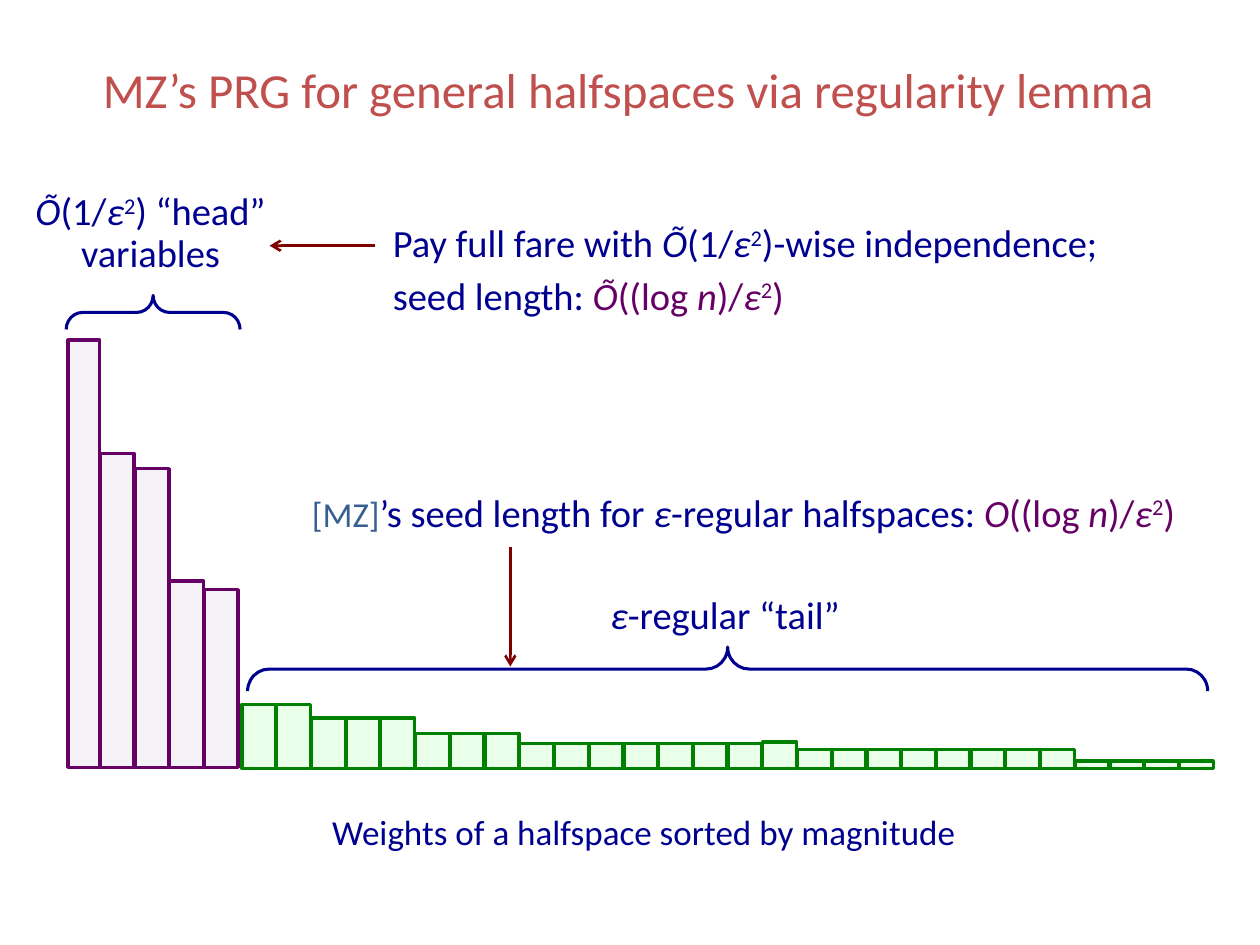
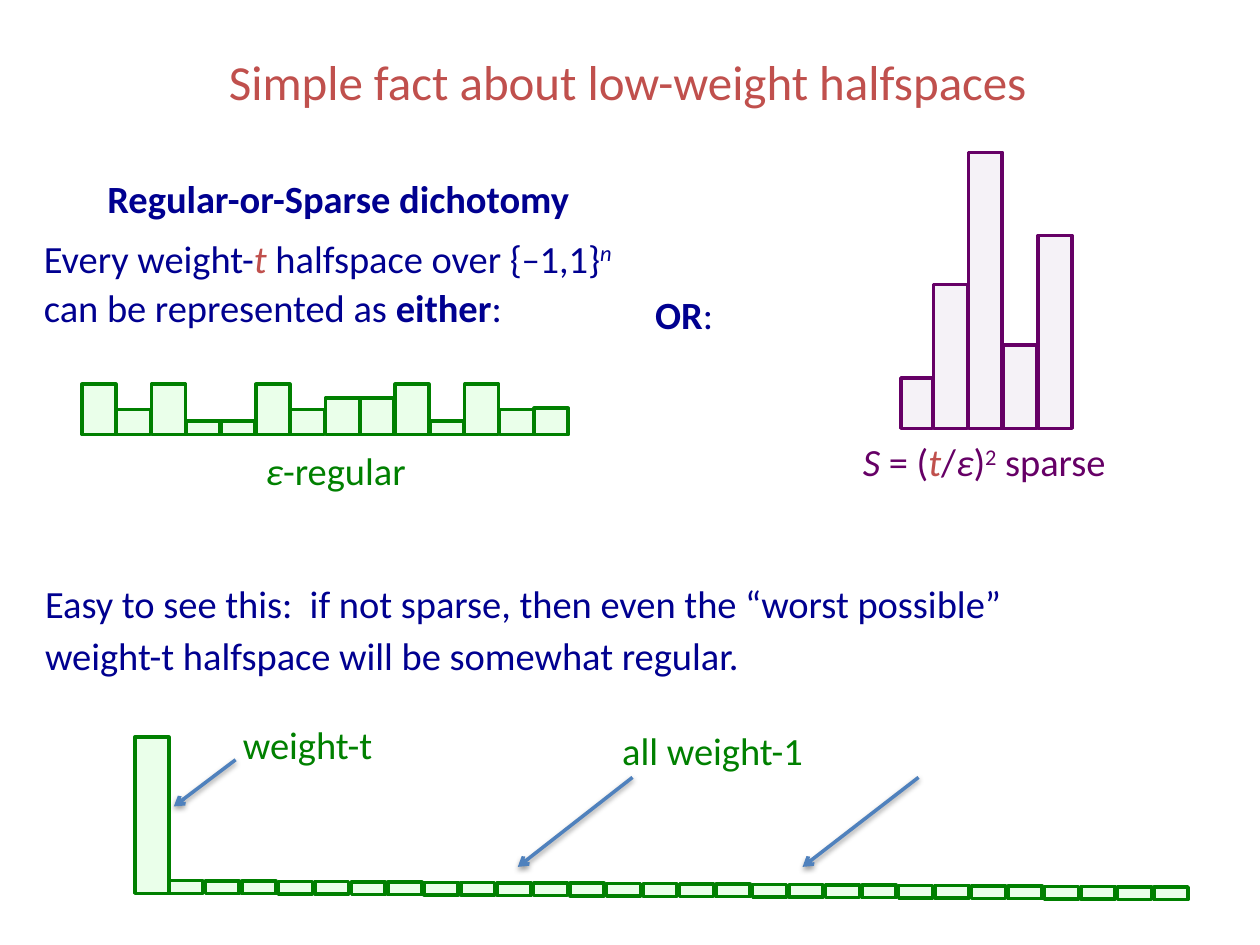
from lxml.etree import SubElement
from pptx import Presentation
from pptx.dml.color import RGBColor
from pptx.enum.shapes import MSO_CONNECTOR, MSO_SHAPE
from pptx.enum.text import MSO_ANCHOR, PP_ALIGN
from pptx.oxml.ns import qn
from pptx.util import Inches, Pt

NAVY, RED, GREEN, PURPLE = "000090", "C0504D", "008000", "660066"
MINT, LAVENDER = "CCFFCC", "E6E0EC"
MAROON, BLUE, STEEL = "800000", "4F81BD", "376092"
LEFT, CENTER = PP_ALIGN.LEFT, PP_ALIGN.CENTER
BAR_WIDTH = 0.27


def add_frame(page, left, top, width, height):
    box = page.shapes.add_textbox(Inches(left), Inches(top), Inches(width), Inches(height))
    frame = box.text_frame
    frame.word_wrap = True
    frame.margin_top = 0
    return frame


def add_para(frame, spans, align=LEFT, color=NAVY, size=22, spacing=30, after=0):
    para = frame.paragraphs[0] if not frame.text else frame.add_paragraph()
    para.alignment = align
    para.line_spacing = Pt(spacing)
    para.space_after = Pt(after)
    for text, style, *special in spans:
        if text == "\n":
            para.add_line_break()
            continue
        span = para.add_run()
        span.text = text
        font = span.font
        font.name = "Calibri"
        font.size = Pt(special[1] if len(special) > 1 else size)
        font.color.rgb = RGBColor.from_string(special[0] if special else color)
        font.bold = "b" in style
        font.italic = "i" in style
        if "^" in style:
            font.fill
            span.font._element.set("baseline", "30000")


deck = Presentation()
deck.slide_width, deck.slide_height = Inches(10), Inches(7.5)
lemma_page, fact_page = [deck.slides.add_slide(deck.slide_layouts[6]) for _ in range(2)]

titles = [
    (lemma_page, 0, -0.19, "MZ’s PRG for general halfspaces via regularity lemma"),
    (fact_page, 0.04, -0.26, "Simple fact about low-weight halfspaces "),
]
for page, left, top, title in titles:
    frame = add_frame(page, left, top, 9.97, 1.73)
    frame.margin_top = Inches(0.05)
    frame.vertical_anchor = MSO_ANCHOR.MIDDLE
    add_para(frame, [(title, "")], CENTER, RED, 28, 38.6)

tail_weights = [0.51] * 2 + [0.4] * 3 + [0.28] * 3 + [0.2] * 7 + [0.21] + [0.15] * 8 + [0.06] * 4
head_weights = [3.39, 2.49, 2.37, 1.48, 1.41]
regular_weights = [0.4, 0.2, 0.4, 0.11, 0.11, 0.4, 0.2, 0.29, 0.29, 0.4, 0.11, 0.4, 0.2, 0.21]
sparse_weights = [0.4, 1.14, 2.19, 0.66, 1.53]
bar_rows = [
    (lemma_page, 1.92, 9.36, 6.1, 0, MINT, GREEN, tail_weights),
    (lemma_page, 0.52, 1.62, 6.09, 0, LAVENDER, PURPLE, head_weights),
    (fact_page, 0.65, 4.24, 3.45, 0, MINT, GREEN, regular_weights),
    (fact_page, 7.13, 8.24, 3.4, 0, LAVENDER, PURPLE, sparse_weights),
    (fact_page, 1.07, 1.07, 7.09, 0, MINT, GREEN, [1.24]),
    (fact_page, 1.34, 9.16, 7.09, 0.05, MINT, GREEN, [0.1] * 28),
]
for page, first, last, bottom, drop, fill, outline, weights in bar_rows:
    gaps = max(len(weights) - 1, 1)
    for index, weight in enumerate(weights):
        trim = 0.02 if fill == LAVENDER and index == 0 else 0
        left = first + (last - first) * index / gaps + trim
        top = bottom + drop * index / gaps - weight
        bar = page.shapes.add_shape(
            MSO_SHAPE.RECTANGLE, Inches(left), Inches(top), Inches(BAR_WIDTH - trim), Inches(weight))
        bar.shadow.inherit = False
        bar.fill.solid()
        bar.fill.fore_color.rgb = RGBColor.from_string(fill)
        tint = bar.element.spPr.find(qn("a:solidFill")).find(qn("a:srgbClr"))
        SubElement(tint, qn("a:alpha"), val="40000")
        bar.line.color.rgb = RGBColor.from_string(outline)
        bar.line.width = Pt(2)

for left, top, width, height in [(5.6, 1.5, 0.35, 7.62), (1.08, 1.79, 0.27, 1.38)]:
    brace = lemma_page.shapes.add_shape(
        MSO_SHAPE.LEFT_BRACE, Inches(left), Inches(top), Inches(width), Inches(height))
    brace.rotation = 90
    brace.adjustments[0] = 0.485
    brace.adjustments[1] = 0.5
    brace.shadow.inherit = False
    brace.fill.background()
    brace.line.color.rgb = RGBColor.from_string(NAVY)
    brace.line.width = Pt(1.75)

arrows = [
    (lemma_page, 2.98, 1.95, 2.14, 1.95, MAROON, 1.5),
    (lemma_page, 4.05, 4.34, 4.05, 5.29, MAROON, 1.5),
    (fact_page, 1.87, 6.03, 1.38, 6.4, BLUE, 2),
    (fact_page, 5.02, 6.17, 4.11, 6.88, BLUE, 2),
    (fact_page, 7.29, 6.17, 6.37, 6.88, BLUE, 2),
]
for page, start_x, start_y, end_x, end_y, color, weight in arrows:
    arrow = page.shapes.add_connector(
        MSO_CONNECTOR.STRAIGHT, Inches(start_x), Inches(start_y), Inches(end_x), Inches(end_y))
    arrow.line.color.rgb = RGBColor.from_string(color)
    arrow.line.width = Pt(weight)
    properties = arrow.element.spPr
    SubElement(properties.find(qn("a:ln")), qn("a:tailEnd"), type="arrow")
    effects = SubElement(properties, qn("a:effectLst"))
    if color == BLUE:
        shadow = SubElement(effects, qn("a:outerShdw"), blurRad="40000", dist="20000",
                            dir="5400000", rotWithShape="0")
        shade = SubElement(shadow, qn("a:srgbClr"), val="000000")
        SubElement(shade, qn("a:alpha"), val="38000")

inverse_square = [("(1/", ""), ("ε", "i"), ("2", "^")]
log_bound = [("((log ", "", PURPLE), ("n", "i", PURPLE), (")/", "", PURPLE),
             ("ε", "i", PURPLE), ("2", "^", PURPLE)]

caption = add_frame(lemma_page, 2.19, 6.31, 5.84, 0.46)
add_para(caption, [("Weights of a halfspace sorted by magnitude", "")], CENTER, size=20, spacing=33, after=9)

tail_label = add_frame(lemma_page, 4.53, 4.6, 2.45, 0.46)
add_para(tail_label, [("ε", "i"), ("-regular “tail”", "")], CENTER, spacing=33, after=9)

head_label = add_frame(lemma_page, -0.19, 1.52, 2.77, 0.75)
add_para(head_label, [("Õ", "i"), *inverse_square, (") “head” variables", "")], CENTER, spacing=24, after=3)

seed_length = add_frame(lemma_page, 2.25, 3.83, 7.37, 0.68)
add_para(seed_length, [
    ("[MZ]", "", STEEL, 20), ("’s seed length for ", ""), ("ε", "i"), ("-regular halfspaces: ", ""),
    ("O", "i", PURPLE), *log_bound, (") ", "", PURPLE)], CENTER)

full_fare = add_frame(lemma_page, 3.02, 1.69, 7.07, 1.12)
add_para(full_fare, [("Pay full fare with ", ""), ("Õ", "i"), *inverse_square, (")-wise independence;", "")])
add_para(full_fare, [("seed length: ", ""), ("Õ", "i", PURPLE), *log_bound, (")", "", PURPLE)])

dichotomy = add_frame(fact_page, 0.25, 1.34, 4.87, 1.08)
add_para(dichotomy, [("Regular-or-Sparse dichotomy", "b")], CENTER, after=6)
add_para(dichotomy, [
    ("Every weight-", ""), ("t", "i", RED), (" halfspace over {", ""), ("−", "", NAVY, 20), ("1,1}", ""),
    ("n ", "i^"), ("can be represented as ", ""), ("either", "b"), (":", "")], spacing=28)

regular_label = add_frame(fact_page, 2.01, 3.5, 1.34, 0.73)
add_para(regular_label, [("ε", "i"), ("-regular", "")], color=GREEN)

or_label = add_frame(fact_page, 4.76, 2.26, 1.34, 0.57)
add_para(or_label, [("OR", "b"), (":", "")], CENTER)

sparse_label = add_frame(fact_page, 6.75, 3.43, 2.23, 0.73)
add_para(sparse_label, [
    ("S", "i"), (" = (", ""), ("t", "i", RED), ("/", ""), ("ε", "i"), (")", ""), ("2", "^"),
    (" sparse", "")], color=PURPLE)

reason = add_frame(fact_page, 0.26, 4.55, 9.53, 1.08)
add_para(reason, [
    ("Easy to see this:  if not sparse, then even the “worst possible” ", ""), ("\n", ""),
    ("weight-t halfspace will be somewhat regular.", "")], after=6)

heavy_label = add_frame(fact_page, 1.83, 5.67, 1.34, 0.73)
add_para(heavy_label, [("weight-t", "")], color=GREEN)

light_label = add_frame(fact_page, 4.84, 5.72, 2.3, 0.73)
add_para(light_label, [("all weight-1", "")], color=GREEN)

deck.save("out.pptx")
